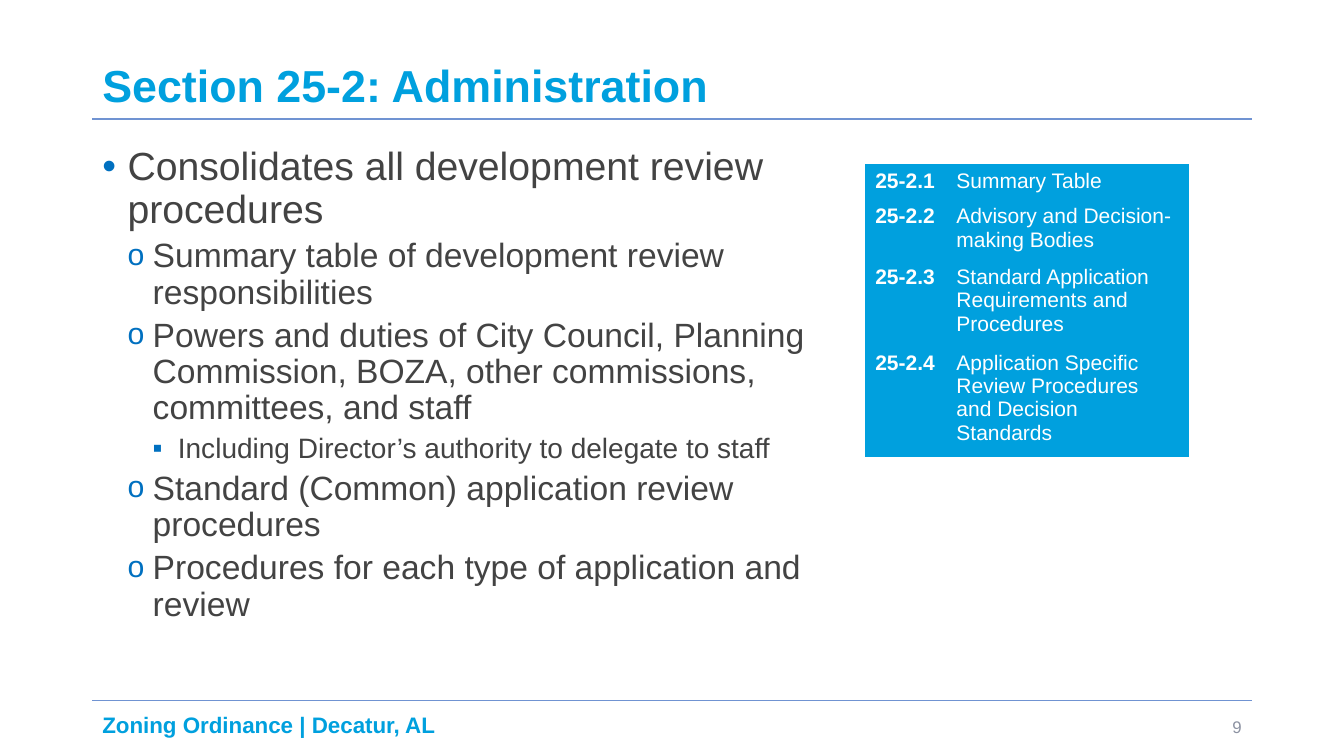
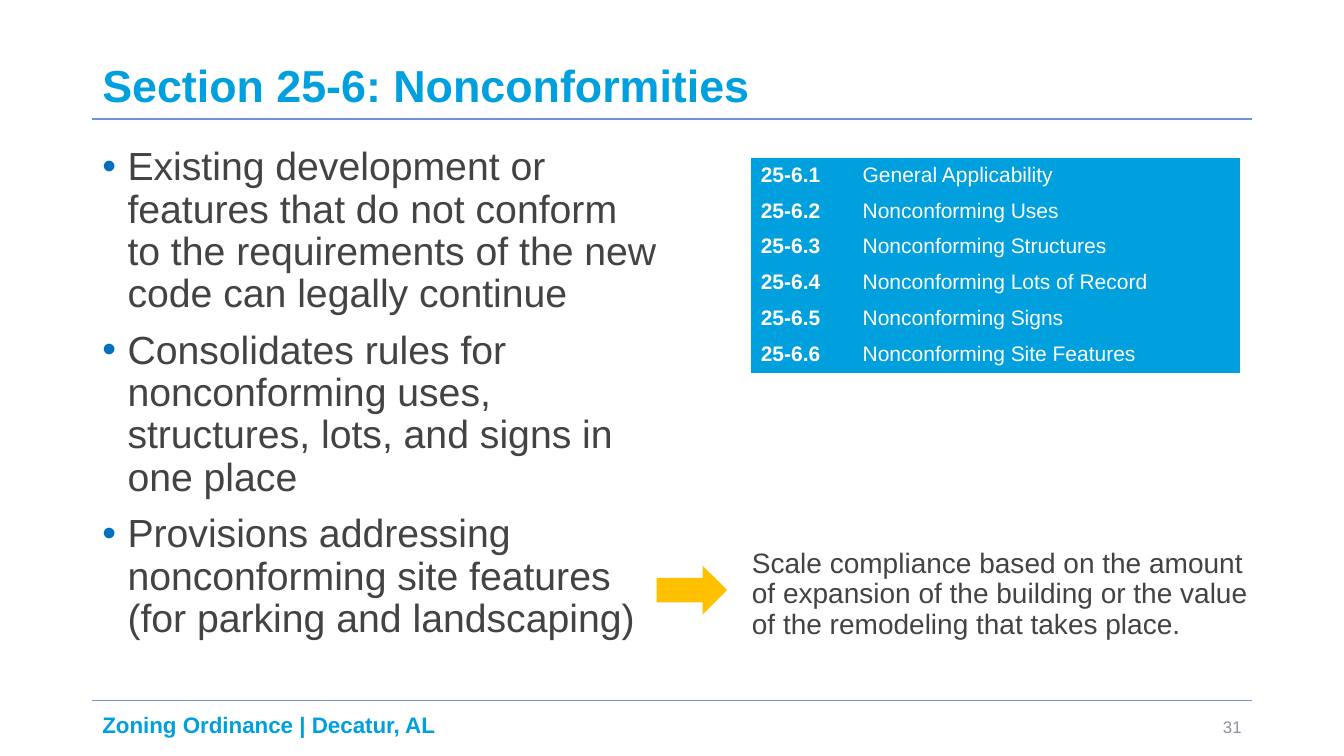
from dataclasses import dataclass

from lxml import etree
from pptx import Presentation
from pptx.dml.color import RGBColor
from pptx.enum import shapes, text
from pptx.oxml import ns
from pptx.util import Pt


@dataclass(frozen=True)
class Theme:
    # Colours
    accent: str = "00A0DE"
    rule: str = "7093D2"
    body: str = "434343"
    bullet: str = "0070C0"
    number: str = "8C92A2"
    arrow: str = "FFC000"
    white: str = "FFFFFF"
    # Type
    font: str = "Arial"
    title_size: int = 32
    level_sizes: tuple = (28, 24, 20)
    footer_size: int = 16
    number_size: int = 12
    table_size: int = 15
    note_size: int = 20
    # Frame shared by the slides
    left: float = 66
    width: float = 828


T = Theme()
NO_TABLE_STYLE = "{2D5ABB26-0587-4C30-8999-92F81FD0307C}"
ROW_HEIGHT = 25.6
INDENT = 18
# Per level: character, size in percent of the text, space before
BULLETS = (("•", 100, 10), ("o", 90, 5), ("▪", 100, 5))


def rgb(value):
    return RGBColor.from_string(value)


def add_run(p, words, size, color, bold=False):
    r = p.add_run()
    r.text = words
    r.font.name = T.font
    r.font.size = Pt(size)
    r.font.bold = bold
    r.font.color.rgb = rgb(color)


def add_frame(s, x, y, w, h, anchor=text.MSO_ANCHOR.TOP):
    tf = s.shapes.add_textbox(Pt(x), Pt(y), Pt(w), Pt(h)).text_frame
    tf.word_wrap = True
    tf.vertical_anchor = anchor
    return tf


def add_line_of_text(s, box, words, size, color, bold=False,
                     anchor=text.MSO_ANCHOR.MIDDLE, align=text.PP_ALIGN.LEFT):
    p = add_frame(s, *box, anchor).paragraphs[0]
    p.line_spacing = 0.9
    p.alignment = align
    add_run(p, words, size, color, bold)


def add_rule(s, y):
    line = s.shapes.add_connector(shapes.MSO_CONNECTOR.STRAIGHT, Pt(T.left),
                                  Pt(y), Pt(T.left + T.width), Pt(y))
    line.line.color.rgb = rgb(T.rule)
    line.line.width = Pt(1)
    etree.SubElement(line._element.spPr, ns.qn("a:effectLst"))


def set_bullet(p, level):
    char, percent, before = BULLETS[level]
    p.level = level
    p.line_spacing = 0.9
    p.space_before = Pt(before)
    pPr = p._p.get_or_add_pPr()
    pPr.set("marL", str(Pt(INDENT * (level + 1))))
    pPr.set("indent", str(-Pt(INDENT)))
    color = etree.SubElement(pPr, ns.qn("a:buClr"))
    etree.SubElement(color, ns.qn("a:srgbClr"), val=T.bullet)
    etree.SubElement(pPr, ns.qn("a:buSzPct"), val=str(percent * 1000))
    etree.SubElement(pPr, ns.qn("a:buFont"), typeface=T.font)
    etree.SubElement(pPr, ns.qn("a:buChar"), char=char)


def add_bullets(s, width, items):
    tf = add_frame(s, T.left, 101.5, width, 385)
    for i, (level, words) in enumerate(items):
        p = tf.add_paragraph() if i else tf.paragraphs[0]
        set_bullet(p, level)
        add_run(p, words, T.level_sizes[level], T.body)


def add_contents(s, x, y, widths, section, names):
    """Table of numbered subsections."""
    frame = s.shapes.add_table(len(names), 2, Pt(x), Pt(y), Pt(sum(widths)),
                               Pt(ROW_HEIGHT * len(names)))
    table = frame.table
    table.first_row = table.horz_banding = False
    table._tbl.tblPr.find(ns.qn("a:tableStyleId")).text = NO_TABLE_STYLE
    for column, width in zip(table.columns, widths):
        column.width = Pt(width)
    for i, name in enumerate(names):
        table.rows[i].height = Pt(ROW_HEIGHT)
        for j, words in enumerate((f"{section}.{i + 1}", name)):
            cell = table.cell(i, j)
            cell.fill.solid()
            cell.fill.fore_color.rgb = rgb(T.accent)
            add_run(cell.text_frame.paragraphs[0], words, T.table_size,
                    T.white, bold=j == 0)


def add_arrow(s, x, y, w, h):
    sp = s.shapes.add_shape(shapes.MSO_SHAPE.RIGHT_ARROW,
                            Pt(x), Pt(y), Pt(w), Pt(h))
    sp.shadow.inherit = False
    sp.fill.solid()
    sp.fill.fore_color.rgb = rgb(T.arrow)
    sp.line.fill.background()


def add_note(s, x, y, w, h, words):
    p = add_frame(s, x, y, w, h).paragraphs[0]
    p.line_spacing = 0.9
    p.space_before = Pt(5)
    add_run(p, words, T.note_size, T.body)


def add_section_slide(prs, title, number):
    """Slide with title, rules, footer and page number."""
    s = prs.slides.add_slide(prs.slide_layouts[6])
    add_line_of_text(s, (T.left, 503.5, 377, 31), "Zoning Ordinance | Decatur, AL",
                     T.footer_size, T.accent, bold=True)
    add_rule(s, 500.3)
    add_rule(s, 85)
    add_line_of_text(s, (T.left, 28.8, T.width, 55.2), title, T.title_size,
                     T.accent, bold=True, anchor=text.MSO_ANCHOR.BOTTOM)
    add_line_of_text(s, (678, 505.5, 216, 28.8), str(number), T.number_size,
                     T.number, align=text.PP_ALIGN.RIGHT)
    return s


def main():
    prs = Presentation()
    prs.slide_width, prs.slide_height = Pt(960), Pt(540)

    # Administration
    s = add_section_slide(prs, "Section 25-2: Administration", 9)
    add_contents(s, 618, 117.2, (58, 173.2), "25-2", (
        "Summary Table",
        "Advisory and Decision-making Bodies",
        "Standard Application Requirements and Procedures",
        "Application Specific Review Procedures and Decision Standards",
    ))
    add_bullets(s, 541, (
        (0, "Consolidates all development review procedures"),
        (1, "Summary table of development review responsibilities"),
        (1, "Powers and duties of City Council, Planning Commission, BOZA, "
            "other commissions, committees, and staff"),
        (2, "Including Director’s authority to delegate to staff"),
        (1, "Standard (Common) application review procedures"),
        (1, "Procedures for each type of application and review"),
    ))

    # Nonconformities
    s = add_section_slide(prs, "Section 25-6: Nonconformities", 31)
    add_bullets(s, 411, (
        (0, "Existing development or features that do not conform to the "
            "requirements of the new code can legally continue"),
        (0, "Consolidates rules for nonconforming uses, structures, lots, "
            "and signs in one place"),
        (0, "Provisions addressing nonconforming site features "
            "(for parking and landscaping)"),
    ))
    add_contents(s, 536.2, 113, (72.8, 277), "25-6", (
        "General Applicability",
        "Nonconforming Uses",
        "Nonconforming Structures",
        "Nonconforming Lots of Record",
        "Nonconforming Signs",
        "Nonconforming Site Features",
    ))
    add_note(s, 530, 389, 375, 72.5,
             "Scale compliance based on the amount of expansion of the building "
             "or the value of the remodeling that takes place.")
    add_arrow(s, 469, 404, 50.4, 35)

    prs.save("out.pptx")


if __name__ == "__main__":
    main()
